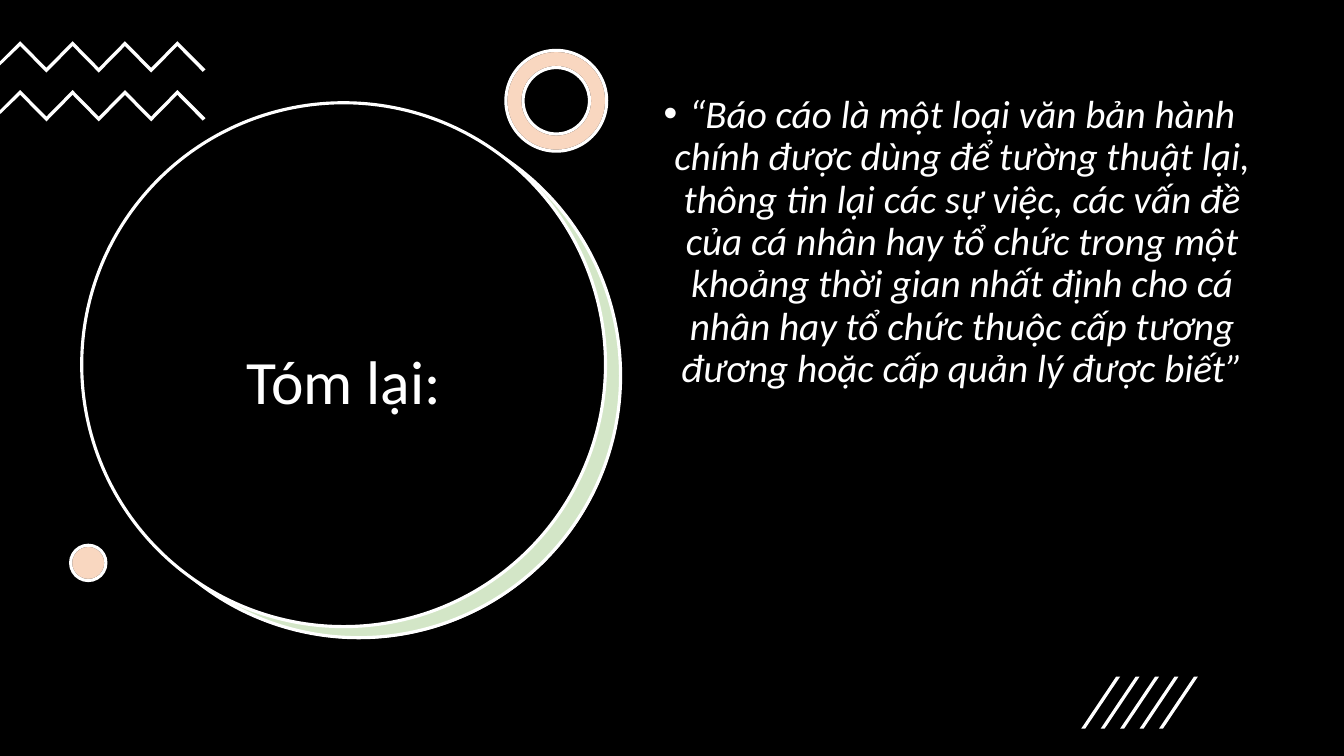
from dataclasses import dataclass

from lxml.etree import SubElement
from pptx import Presentation
from pptx.dml.color import RGBColor
from pptx.enum.shapes import MSO_SHAPE
from pptx.enum.text import MSO_ANCHOR, PP_ALIGN
from pptx.oxml.ns import qn
from pptx.util import Cm, Pt


@dataclass(frozen=True)
class Theme:
    night: RGBColor = RGBColor(0x00, 0x00, 0x00)
    chalk: RGBColor = RGBColor(0xFF, 0xFF, 0xFF)
    leaf: RGBColor = RGBColor(0x70, 0xAD, 0x47)
    peach: RGBColor = RGBColor(0xED, 0x7D, 0x31)
    tint_percent: int = 30
    font: str = "Calibri"
    title_size: Pt = Pt(44)
    quote_size: Pt = Pt(28)
    outline: Pt = Pt(2.25)


THEME = Theme()
QUOTE = (
    "“Báo cáo là một loại văn bản hành chính được dùng để tường thuật lại, "
    "thông tin lại các sự việc, các vấn đề của cá nhân hay tổ chức trong một "
    "khoảng thời gian nhất định cho cá nhân hay tổ chức thuộc cấp tương đương "
    "hoặc cấp quản lý được biết”"
)


def paint(shape, fill, line=None, tinted=False):
    shape.shadow.inherit = False
    shape.fill.solid()
    shape.fill.fore_color.rgb = fill
    if tinted:
        color = shape.fill._xPr.find(qn("a:solidFill"))[0]
        SubElement(color, qn("a:alpha"), val=str(THEME.tint_percent * 1000))
    if line is None:
        shape.line.fill.background()
    else:
        shape.line.color.rgb = line
        shape.line.width = THEME.outline


def add_figure(slide, preset, left, top, width, height, fill, line=None, tinted=False):
    figure = slide.shapes.add_shape(preset, Cm(left), Cm(top), Cm(width), Cm(height))
    paint(figure, fill, line, tinted)
    return figure


def add_disc(slide, left, top, size, fill, line=None, tinted=False):
    return add_figure(slide, MSO_SHAPE.OVAL, left, top, size, size, fill, line, tinted)


def add_accent(slide, preset, left, top, size):
    layers = ((THEME.chalk, THEME.night, False), (THEME.peach, THEME.chalk, True))
    for fill, line, tinted in layers:
        accent = add_figure(slide, preset, left, top, size, size, fill, line, tinted)
        if preset == MSO_SHAPE.DONUT:
            accent.adjustments[0] = 0.17


def add_outline(slide, points):
    corners = [(Cm(x), Cm(y)) for x, y in points]
    builder = slide.shapes.build_freeform(*corners[0], scale=1.0)
    builder.add_line_segments(corners[1:], close=True)
    paint(builder.convert_to_shape(), THEME.chalk)


def add_zigzag(slide, top):
    thickness, depth, half_wave = 0.12, 0.67, 0.66
    ridge = [(0.51 + step * half_wave, top + step % 2 * depth) for step in range(7)]
    underside = [(x, y + thickness) for x, y in reversed(ridge)]
    tip = [(5.18, top + 0.71), (5.11, top + 0.77)]
    slide_edge = [(0, top + 0.61), (0, top + 0.51)]
    add_outline(slide, ridge + tip + underside + slide_edge)


def add_slash(slide, left):
    top, bottom, slant, thickness = 17.05, 18.36, 0.88, 0.1
    add_outline(slide, [
        (left + thickness, bottom), (left, bottom),
        (left + slant, top), (left + slant + thickness, top),
    ])


def write(frame, text, size, italic=False):
    frame.word_wrap = True
    frame.text = text
    paragraph = frame.paragraphs[0]
    paragraph.alignment = PP_ALIGN.CENTER
    paragraph.line_spacing = 0.9
    paragraph.font.name = THEME.font
    paragraph.font.size = size
    paragraph.font.italic = italic
    paragraph.font.color.rgb = THEME.chalk
    return paragraph


def place_title(slide):
    title = slide.shapes.title
    title.left, title.top, title.width, title.height = Cm(3.07), Cm(5.21), Cm(11.2), Cm(8.94)
    title.text_frame.vertical_anchor = MSO_ANCHOR.MIDDLE
    write(title.text_frame, "Tóm lại:", THEME.title_size)
    tree = title._element.getparent()
    tree.remove(title._element)
    tree.append(title._element)


def add_quote(slide):
    quote = slide.shapes.add_textbox(Cm(16.05), Cm(2.26), Cm(15.75), Cm(12.95))
    paragraph = write(quote.text_frame, QUOTE, THEME.quote_size, italic=True)
    paragraph.space_before = Pt(10)
    properties = paragraph._p.get_or_add_pPr()
    properties.set("marL", str(Cm(0.64)))
    properties.set("indent", str(Cm(-0.64)))
    bullet_font = properties.makeelement(qn("a:buFont"), {"typeface": "Arial"})
    bullet = properties.makeelement(qn("a:buChar"), {"char": "•"})
    run_defaults = properties.find(qn("a:defRPr"))
    run_defaults.addprevious(bullet_font)
    run_defaults.addprevious(bullet)


def main():
    deck = Presentation()
    deck.slide_width, deck.slide_height = Cm(33.87), Cm(19.05)
    slide = deck.slides.add_slide(deck.slide_layouts[5])

    add_figure(slide, MSO_SHAPE.RECTANGLE, 0, 0, 33.87, 19.05, THEME.night)
    add_disc(slide, 2.46, 2.9, 13.2, THEME.chalk)
    add_disc(slide, 2.44, 2.87, 13.2, THEME.leaf, THEME.chalk, tinted=True)
    add_disc(slide, 2.06, 2.59, 13.2, THEME.night, THEME.chalk)
    place_title(slide)

    for row in range(2):
        add_zigzag(slide, 1.04 + row * 1.23)
    add_accent(slide, MSO_SHAPE.DONUT, 12.75, 1.27, 2.54)
    add_accent(slide, MSO_SHAPE.OVAL, 1.78, 13.74, 0.89)
    add_quote(slide)
    for column in range(5):
        add_slash(slide, 27.25 + column * 0.49)

    deck.save("out.pptx")


if __name__ == "__main__":
    main()
